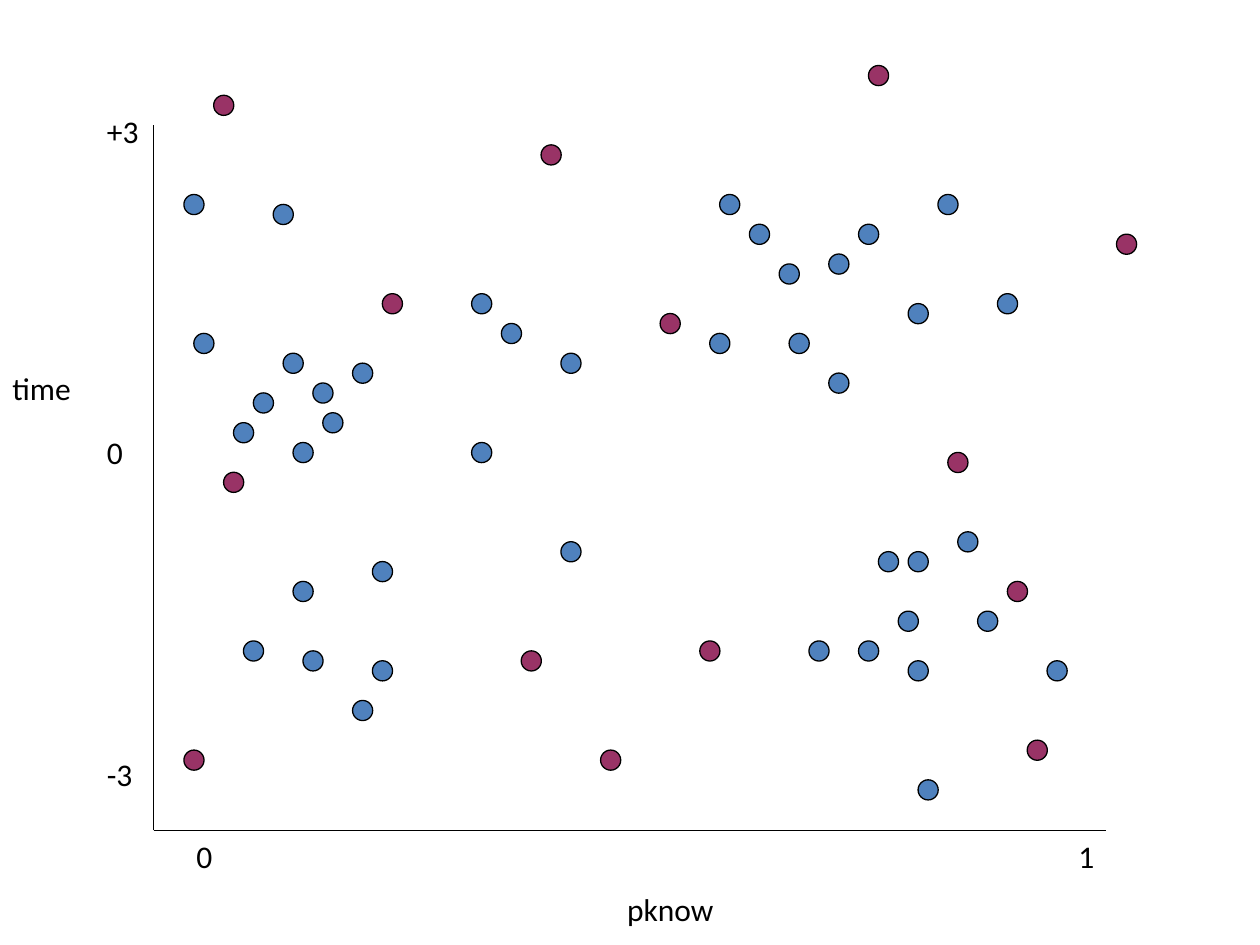
from dataclasses import dataclass

from lxml import etree
from pptx import Presentation
from pptx.dml.color import RGBColor
from pptx.enum.shapes import MSO_CONNECTOR, MSO_SHAPE
from pptx.enum.text import PP_ALIGN
from pptx.oxml.ns import qn
from pptx.util import Inches, Pt

ELLIPSE = MSO_SHAPE.OVAL
STRAIGHT = MSO_CONNECTOR.STRAIGHT
LEFT, CENTER = PP_ALIGN.LEFT, PP_ALIGN.CENTER


@dataclass(frozen=True)
class Theme:
    font: str = "Calibri"
    size: int = 18
    ink: str = "000000"
    regular: str = "4F81BD"
    outlier: str = "993366"
    line: float = 0.75


THEME = Theme()
DOT = 0.16
STEP = 0.2 / 2.54  # the dots sit on a 2 mm grid

# Dots as (column, row) on the grid, rows counted downwards
REGULAR = [
    # lower right
    (78, 47), (73, 60), (72, 55), (68, 58), (70, 49), (73, 49),
    (74, 72), (80, 55), (87, 60), (63, 58),
    # upper right
    (54, 13), (57, 16), (53, 27), (61, 27), (73, 24), (60, 20),
    (68, 16), (65, 19), (65, 31), (76, 13), (82, 23),
    # lower left
    (17, 64), (19, 60), (6, 58), (11, 52), (19, 50), (12, 59),
    # upper left
    (13, 32), (10, 29), (5, 36), (7, 33), (11, 38), (17, 30),
    (9, 14), (0, 13), (14, 35), (1, 27),
    # middle
    (29, 38), (38, 48), (38, 29), (29, 23), (32, 26),
]
OUTLIERS = [
    (94, 17), (85, 68), (69, 0), (0, 69), (3, 3), (34, 59), (36, 8),
    (42, 69), (77, 39), (48, 25), (4, 41), (20, 23), (83, 52), (52, 58),
]


def add_text(slide, box, lines, gap=9, aligns=(), tab=None):
    """Place one paragraph per line, gap points apart."""
    tf = slide.shapes.add_textbox(*map(Inches, box)).text_frame
    tf.word_wrap = True
    for i, line in enumerate(lines):
        p = tf.add_paragraph() if i else tf.paragraphs[0]
        p.alignment = aligns[i] if aligns else LEFT
        if i:
            p.space_before = Pt(gap)
        if tab and "\t" in line:
            stops = etree.SubElement(p._p.get_or_add_pPr(), qn("a:tabLst"))
            etree.SubElement(stops, qn("a:tab"), pos=str(Inches(tab)), algn="l")
        r = p.add_run()
        r.text = line
        r.font.name = THEME.font
        r.font.size = Pt(THEME.size)
        r.font.color.rgb = RGBColor.from_string(THEME.ink)


def set_line(line):
    line.color.rgb = RGBColor.from_string(THEME.ink)
    line.width = Pt(THEME.line)


def add_axes(slide, left, top, width, height):
    """Draw the vertical and horizontal axes, meeting at the lower left."""
    bottom = top + height
    for end in ((left, top), (left + width, bottom)):
        cx = slide.shapes.add_connector(
            STRAIGHT, *map(Inches, (left, bottom, *end)))
        set_line(cx.line)
        etree.SubElement(cx._element.spPr, qn("a:effectLst"))


def add_labels(slide, left, top, width, height):
    """Label the axes around the plot box."""
    add_text(slide, (left + 0.24, top + height, 7.72, 0.85),
             ["0\t1", "pknow"], aligns=(LEFT, CENTER), tab=7)
    add_text(slide, (left - 1.22, top + 1.89, 0.83, 0.4), ["time"])
    add_text(slide, (left - 0.47, top - 0.15, 0.63, 5.82),
             ["+3", "0", "-3"], gap=162)


def add_dots(slide, left, top, points, color):
    """Draw one series of dots on the grid that starts at left, top."""
    for col, row in points:
        sp = slide.shapes.add_shape(
            ELLIPSE, Inches(left + col * STEP), Inches(top + row * STEP),
            Inches(DOT), Inches(DOT))
        sp.shadow.inherit = False
        sp.fill.solid()
        sp.fill.fore_color.rgb = RGBColor.from_string(color)
        set_line(sp.line)


def add_scatter(slide, left, top, width, height):
    """Build the scatter diagram; some outliers lie beyond the axes."""
    add_labels(slide, left, top, width, height)
    add_axes(slide, left, top, width, height)
    for points, color in ((REGULAR, THEME.regular), (OUTLIERS, THEME.outlier)):
        add_dots(slide, left + 0.24, top - 0.47, points, color)


def main():
    prs = Presentation()
    prs.slide_width, prs.slide_height = Inches(10), Inches(7.5)
    slide = prs.slides.add_slide(prs.slide_layouts[6])
    add_scatter(slide, 1.22, 0.99, 7.56, 5.6)
    prs.save("out.pptx")


if __name__ == "__main__":
    main()
